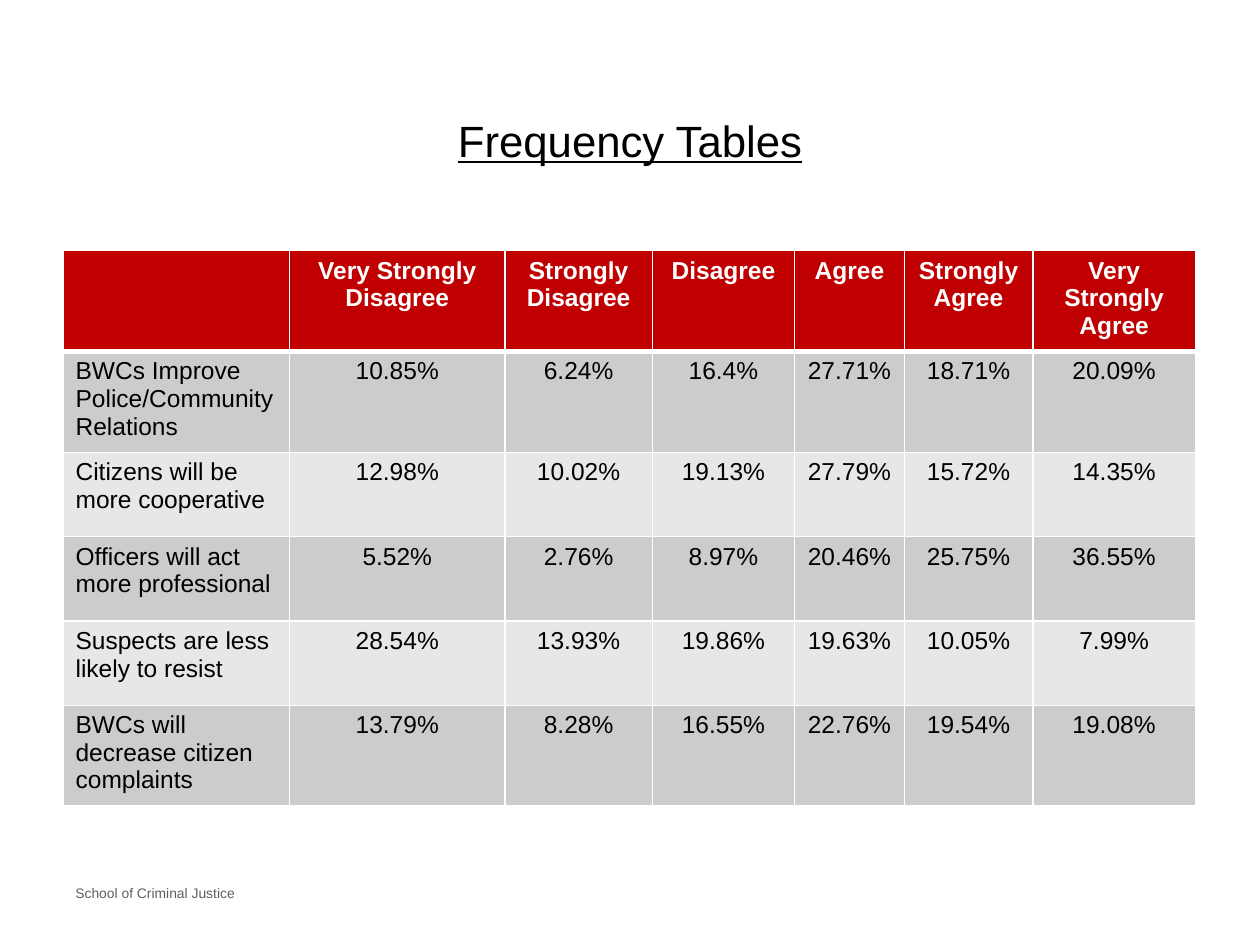
from lxml import etree
from pptx import Presentation
from pptx.dml.color import RGBColor
from pptx.enum import text
from pptx.oxml.ns import qn
from pptx.util import Cm, Pt

FONT = "Arial"
BLACK = RGBColor(0x00, 0x00, 0x00)
WHITE = RGBColor(0xFF, 0xFF, 0xFF)
RED = RGBColor(0xC0, 0x00, 0x00)
GREY = RGBColor(0x5F, 0x5F, 0x5F)
BANDS = [RGBColor(0xCC, 0xCC, 0xCC), RGBColor(0xE7, 0xE7, 0xE7)]

HEADER = ["", "Very Strongly Disagree", "Strongly Disagree", "Disagree",
          "Agree", "Strongly Agree", "Very Strongly Agree"]
ROWS = [
    ["BWCs Improve Police/Community Relations",
     "10.85%", "6.24%", "16.4%", "27.71%", "18.71%", "20.09%"],
    ["Citizens will be more cooperative",
     "12.98%", "10.02%", "19.13%", "27.79%", "15.72%", "14.35%"],
    ["Officers will act more professional",
     "5.52%", "2.76%", "8.97%", "20.46%", "25.75%", "36.55%"],
    ["Suspects are less likely to resist",
     "28.54%", "13.93%", "19.86%", "19.63%", "10.05%", "7.99%"],
    ["BWCs will decrease citizen complaints",
     "13.79%", "8.28%", "16.55%", "22.76%", "19.54%", "19.08%"],
]
COLUMN_WIDTHS = [4.57, 4.34, 2.97, 2.87, 2.21, 2.59, 3.28]


def set_font(p, size, color, bold=False, underline=False):
    f = p.font
    f.name, f.size, f.bold, f.underline = FONT, Pt(size), bold, underline
    f.color.rgb = color


def add_text(s, box, words, size, color, align=text.PP_ALIGN.LEFT,
             anchor=text.MSO_ANCHOR.TOP, underline=False):
    tf = s.shapes.add_textbox(*map(Cm, box)).text_frame
    tf.word_wrap = True
    tf.vertical_anchor = anchor
    p = tf.paragraphs[0]
    p.text = words
    p.alignment = align
    set_font(p, size, color, underline=underline)


def set_borders(cell, color, top, bottom):
    tc_pr = cell._tc.get_or_add_tcPr()
    sides = [("lnL", 1), ("lnR", 1), ("lnT", top), ("lnB", bottom)]
    for i, (tag, width) in enumerate(sides):
        ln = etree.Element(qn("a:" + tag), w=str(Pt(width)))
        fill = etree.SubElement(ln, qn("a:solidFill"))
        etree.SubElement(fill, qn("a:srgbClr"), val=str(color))
        tc_pr.insert(i, ln)  # borders come before the cell fill


def add_frequency_table(s, box):
    data = [HEADER] + ROWS
    table = s.shapes.add_table(len(data), len(HEADER), *map(Cm, box)).table
    for column, width in zip(table.columns, COLUMN_WIDTHS):
        column.width = Cm(width)
    for i, values in enumerate(data):
        table.rows[i].height = Cm(box[3] / len(data))
        is_header = i == 0
        for j, value in enumerate(values):
            cell = table.cell(i, j)
            cell.fill.solid()
            cell.fill.fore_color.rgb = RED if is_header else BANDS[(i - 1) % 2]
            set_borders(cell, WHITE, top=3 if i == 1 else 1,
                        bottom=3 if is_header else 1)
            p = cell.text_frame.paragraphs[0]
            p.text = value
            p.alignment = text.PP_ALIGN.CENTER if j else text.PP_ALIGN.LEFT
            set_font(p, 14, WHITE if is_header else BLACK, bold=is_header)


def main():
    prs = Presentation()
    prs.slide_width, prs.slide_height = Cm(25.4), Cm(19.05)
    s = prs.slides.add_slide(prs.slide_layouts[6])

    # Footer
    add_text(s, (1.27, 17.7, 6.35, 0.58), "School of Criminal Justice", 7.9, GREY)
    # Title
    add_text(s, (1.27, 1.7, 22.86, 2.24), "Frequency Tables", 25, BLACK,
             text.PP_ALIGN.CENTER, text.MSO_ANCHOR.MIDDLE, underline=True)
    # Survey answers
    add_frequency_table(s, (1.27, 5.05, 22.86, 10.2))

    prs.save("out.pptx")


if __name__ == "__main__":
    main()
